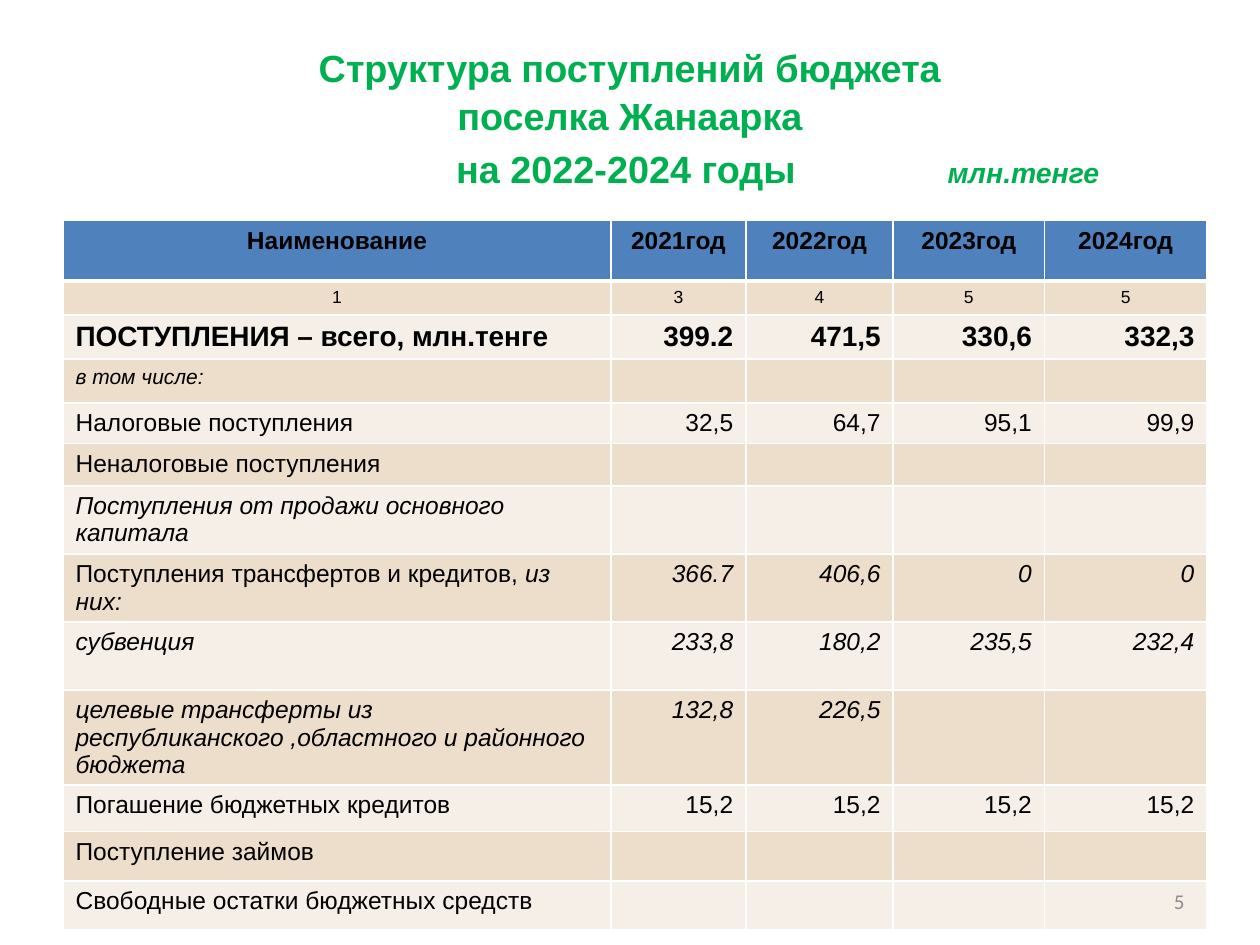
from dataclasses import dataclass

from lxml.etree import SubElement
from pptx import Presentation
from pptx.dml.color import RGBColor
from pptx.enum.text import MSO_ANCHOR, MSO_AUTO_SIZE, PP_ALIGN
from pptx.oxml.ns import qn
from pptx.util import Inches, Pt

HUES = {"title": "00B050", "head": "4F81BD", "dark": "ECDECB", "light": "F6EFE7",
        "text": "000000", "line": "FFFFFF", "page": "8C8C8C"}
WIDTHS = [4.35, 1.07, 1.17, 1.2, 1.29]
LEFT, CENTER, RIGHT = PP_ALIGN.LEFT, PP_ALIGN.CENTER, PP_ALIGN.RIGHT


@dataclass
class Row:
    name: str
    vals: tuple = ("",) * 4
    high: float = 0.35
    size: float = 14
    bold: bool = False
    slant: bool = False
    mid: bool = False
    tail: str = ""  # italic ending of the name


ROWS = [
    Row("Наименование", ("2021год", "2022год", "2023год", "2024год"), 0.48,
        bold=True, mid=True),
    Row("1", ("3", "4", "5", "5"), 0.27, size=10, mid=True),
    Row("ПОСТУПЛЕНИЯ – всего, млн.тенге", ("399.2", "471,5", "330,6", "332,3"),
        size=16, bold=True),
    Row("в том числе:", size=12, slant=True),
    Row("Налоговые поступления", ("32,5", "64,7", "95,1", "99,9"), 0.32),
    Row("Неналоговые поступления", high=0.33),
    Row("Поступления от продажи основного капитала", high=0.54, slant=True),
    Row("Поступления трансфертов и кредитов, ", ("366.7", "406,6", "0", "0"), 0.54,
        slant=True, tail="из них:"),
    Row("субвенция", ("233,8", "180,2", "235,5", "232,4"), 0.54, slant=True),
    Row("целевые трансферты из республиканского ,областного и районного бюджета",
        ("132,8", "226,5", "", ""), 0.75, slant=True),
    Row("Погашение бюджетных кредитов", ("15,2",) * 4, 0.37),
    Row("Поступление займов", high=0.39),
    Row("Свободные остатки бюджетных средств", high=0.39),
]


def write(para, text: str, size: float = 14, hue: str = "text", bold: bool = False,
          slant: bool = False, align=LEFT, face: str = "Arial") -> None:
    """Add one formatted run to a paragraph."""
    para.alignment = align
    if not text:
        SubElement(para._p, qn("a:endParaRPr"), sz=str(int(size * 100)))
        return
    run = para.add_run()
    run.text = text
    font = run.font
    font.name, font.size, font.bold, font.italic = face, Pt(size), bold, slant
    font.color.rgb = RGBColor.from_string(HUES[hue])


def edge(cell, side: str, width: float) -> None:
    """Draw one border of a cell; call before the fill is set."""
    line = SubElement(cell._tc.get_or_add_tcPr(), qn(f"a:{side}"), w=str(Pt(width)))
    fill = SubElement(line, qn("a:solidFill"))
    SubElement(fill, qn("a:srgbClr"), val=HUES["line"])


def paint(cell, row: int) -> None:
    """Set the borders and the banded fill."""
    for side in ("lnL", "lnR", "lnT", "lnB"):
        thick = (row, side) in ((0, "lnB"), (1, "lnT"))
        edge(cell, side, 3 if thick else 1)
    hue = "head" if row == 0 else "dark" if row % 2 else "light"
    cell.fill.solid()
    cell.fill.fore_color.rgb = RGBColor.from_string(HUES[hue])


def place(shape, *box: float):
    """Move a shape and return its text frame."""
    shape.left, shape.top, shape.width, shape.height = map(Inches, box)
    frame = shape.text_frame
    frame.word_wrap = True
    frame.auto_size = MSO_AUTO_SIZE.NONE
    frame.vertical_anchor = MSO_ANCHOR.MIDDLE
    return frame


def head(slide) -> None:
    frame = place(slide.shapes.title, 0.5, 0.31, 9, 1.25)
    look = dict(size=21.6, hue="title", bold=True)
    write(frame.paragraphs[0], "Структура поступлений бюджета", align=CENTER, **look)
    second, third = frame.add_paragraph(), frame.add_paragraph()
    write(second, "поселка Жанаарка", align=CENTER, **look)
    write(third, "\tна 2022-2024 годы\t", **look)
    write(third, "млн.тенге", **{**look, "size": 16.2, "slant": True})
    for para, gap in zip(frame.paragraphs, (0, 1.5, 4)):
        para.space_before = Pt(gap)
    # Tab stops for the years and the unit
    stops = SubElement(third._p.get_or_add_pPr(), qn("a:tabLst"))
    for spot in (3.02, 6.92):
        SubElement(stops, qn("a:tab"), pos=str(Inches(spot)), algn="l")


def grid(slide) -> None:
    high = sum(row.high for row in ROWS)
    table = slide.shapes.add_table(len(ROWS), len(WIDTHS), Inches(0.5), Inches(1.75),
                                   Inches(sum(WIDTHS)), Inches(high)).table
    for col, width in zip(table.columns, WIDTHS):
        col.width = Inches(width)
    for i, row in enumerate(ROWS):
        table.rows[i].height = Inches(row.high)
        for j, text in enumerate((row.name, *row.vals)):
            cell = table.cell(i, j)
            paint(cell, i)
            para = cell.text_frame.paragraphs[0]
            look = dict(size=row.size, bold=row.bold,
                        align=CENTER if row.mid else RIGHT if j else LEFT)
            mixed = j == 0 and row.tail
            write(para, text, slant=row.slant and not mixed, **look)
            if mixed:
                write(para, row.tail, slant=True, **look)


def main() -> None:
    deck = Presentation()
    deck.slide_width, deck.slide_height = Inches(10), Inches(7.5)
    slide = deck.slides.add_slide(deck.slide_layouts[5])
    head(slide)
    grid(slide)
    # Page number
    frame = place(slide.shapes.add_textbox(0, 0, 0, 0), 7.17, 6.95, 2.33, 0.4)
    write(frame.paragraphs[0], "5", size=12, hue="page", align=RIGHT, face="Calibri")
    deck.save("out.pptx")


if __name__ == "__main__":
    main()
